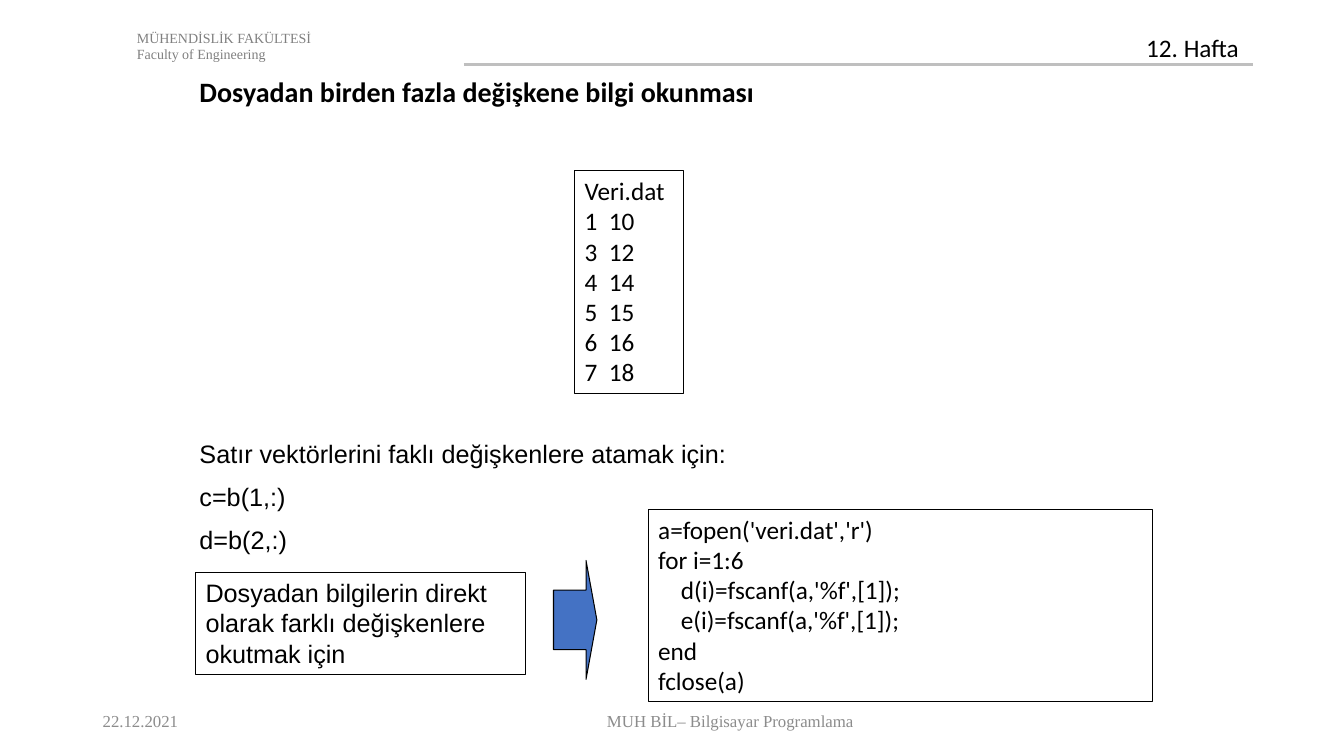
from dataclasses import dataclass, field
from typing import Any

from lxml.etree import SubElement
from pptx import Presentation
from pptx.dml.color import RGBColor
from pptx.enum.shapes import MSO_CONNECTOR, MSO_SHAPE
from pptx.enum.text import MSO_ANCHOR, MSO_AUTO_SIZE, PP_ALIGN
from pptx.oxml.ns import qn
from pptx.util import Inches, Pt


@dataclass(frozen=True)
class Theme:
    """Colours, fonts and sizes of the slide."""
    black: RGBColor = RGBColor(0, 0, 0)
    gray: RGBColor = RGBColor(0x80, 0x80, 0x80)
    pale: RGBColor = RGBColor(0x8C, 0x8C, 0x8C)
    rule: RGBColor = RGBColor(0xBF, 0xBF, 0xBF)
    blue: RGBColor = RGBColor(0x44, 0x72, 0xC4)
    sans: str = "Calibri"
    plain: str = "Arial"
    serif: str = "Times New Roman"
    small: Pt = Pt(10)
    foot: Pt = Pt(12)
    body: Pt = Pt(18)
    title: Pt = Pt(20)
    gap: Pt = Pt(9)
    thin: Pt = Pt(0.75)
    thick: Pt = Pt(1.5)


THEME = Theme()
CODE = {"name": THEME.sans, "size": THEME.body, "color": THEME.black}
BODY = CODE | {"name": THEME.plain}
TITLE = CODE | {"size": THEME.title, "bold": True}
HEAD = {"name": THEME.serif, "size": THEME.small, "color": THEME.gray}
FOOT = {"name": THEME.serif, "size": THEME.foot, "color": THEME.pale}
FIT = {"word_wrap": True, "auto_size": MSO_AUTO_SIZE.SHAPE_TO_FIT_TEXT}
MID = {
    "word_wrap": True,
    "auto_size": MSO_AUTO_SIZE.NONE,
    "vertical_anchor": MSO_ANCHOR.MIDDLE,
}


@dataclass(frozen=True)
class Block:
    """A text block with its place and format."""
    place: tuple[float, float, float, float]
    lines: list[str]
    font: dict[str, Any]
    frame: dict[str, Any] = field(default_factory=lambda: FIT)
    align: PP_ALIGN = PP_ALIGN.LEFT
    gap: Pt = Pt(0)
    boxed: bool = False


DATA = [(1, 10), (3, 12), (4, 14), (5, 15), (6, 16), (7, 18)]
BLOCKS = [
    Block((1.26, 0.24, 6.67, 0.44),
          ["MÜHENDİSLİK FAKÜLTESİ", "Faculty of Engineering"], HEAD),
    Block((11.27, 0.27, 1.15, 0.4), ["12. Hafta"], CODE),
    Block((1.88, 0.69, 6.69, 0.44),
          ["Dosyadan birden fazla değişkene bilgi okunması"], TITLE),
    Block((5.7, 1.69, 1.08, 2.21),
          ["Veri.dat", *(f"{row}  {num}" for row, num in DATA)],
          CODE, boxed=True),
    Block((1.88, 4.3, 6.69, 1.3),
          ["Satır vektörlerini faklı değişkenlere atamak için:",
           "c=b(1,:)", "d=b(2,:)"], BODY, gap=THEME.gap),
    Block((6.43, 5.05, 5, 1.91),
          ["a=fopen('veri.dat','r')", "for i=1:6",
           "    d(i)=fscanf(a,'%f',[1]);", "    e(i)=fscanf(a,'%f',[1]);",
           "end", "fclose(a)"], CODE, boxed=True),
    Block((1.94, 5.68, 3.27, 1.01),
          ["Dosyadan bilgilerin direkt olarak farklı değişkenlere "
           "okutmak için"], BODY, boxed=True),
    Block((0.92, 6.95, 1.57, 0.4), ["22.12.2021"], FOOT, MID),
    Block((2.73, 6.95, 9.03, 0.4), ["MUH BİL– Bilgisayar Programlama"],
          FOOT, MID, PP_ALIGN.CENTER),
]


def apply(target: Any, form: dict[str, Any]) -> None:
    """Set each format value on the target."""
    for key, value in form.items():
        if key == "color":
            target.color.rgb = value
        else:
            setattr(target, key, value)


def add_form(slide: Any, kind: MSO_SHAPE, place: tuple) -> Any:
    """Add a preset shape with a thin black outline."""
    shape = slide.shapes.add_shape(kind, *map(Inches, place))
    shape.shadow.inherit = False
    apply(shape.line, {"color": THEME.black, "width": THEME.thin})
    return shape


def add_block(slide: Any, block: Block) -> None:
    """Draw one text block, boxed or bare."""
    if block.boxed:
        shape = add_form(slide, MSO_SHAPE.RECTANGLE, block.place)
        shape.fill.background()
    else:
        shape = slide.shapes.add_textbox(*map(Inches, block.place))
    frame = shape.text_frame
    apply(frame, {"vertical_anchor": MSO_ANCHOR.TOP} | block.frame)
    for num, line in enumerate(block.lines):
        para = frame.add_paragraph() if num else frame.paragraphs[0]
        apply(para, {"alignment": block.align})
        if num and block.gap:
            para.space_before = block.gap
        run = para.add_run()
        run.text = line
        apply(run.font, block.font)


def add_rule(slide: Any) -> None:
    """Draw the line below the header."""
    ends = map(Inches, (4.6, 0.64, 12.43, 0.64))
    rule = slide.shapes.add_connector(MSO_CONNECTOR.STRAIGHT, *ends)
    apply(rule.line, {"color": THEME.rule, "width": THEME.thick})
    SubElement(rule.element.spPr, qn("a:effectLst"))


def add_arrow(slide: Any) -> None:
    """Draw the arrow from the note to the code."""
    arrow = add_form(slide, MSO_SHAPE.RIGHT_ARROW, (5.49, 5.56, 0.43, 1.18))
    arrow.fill.solid()
    arrow.fill.fore_color.rgb = THEME.blue
    arrow.adjustments[0] = 0.5
    arrow.adjustments[1] = 0.25


def main() -> None:
    """Build the slide and save it."""
    deck = Presentation()
    apply(deck, {"slide_width": Inches(13.33), "slide_height": Inches(7.5)})
    slide = deck.slides.add_slide(deck.slide_layouts[6])
    add_rule(slide)
    for block in BLOCKS:
        add_block(slide, block)
    add_arrow(slide)
    deck.save("out.pptx")


if __name__ == "__main__":
    main()
